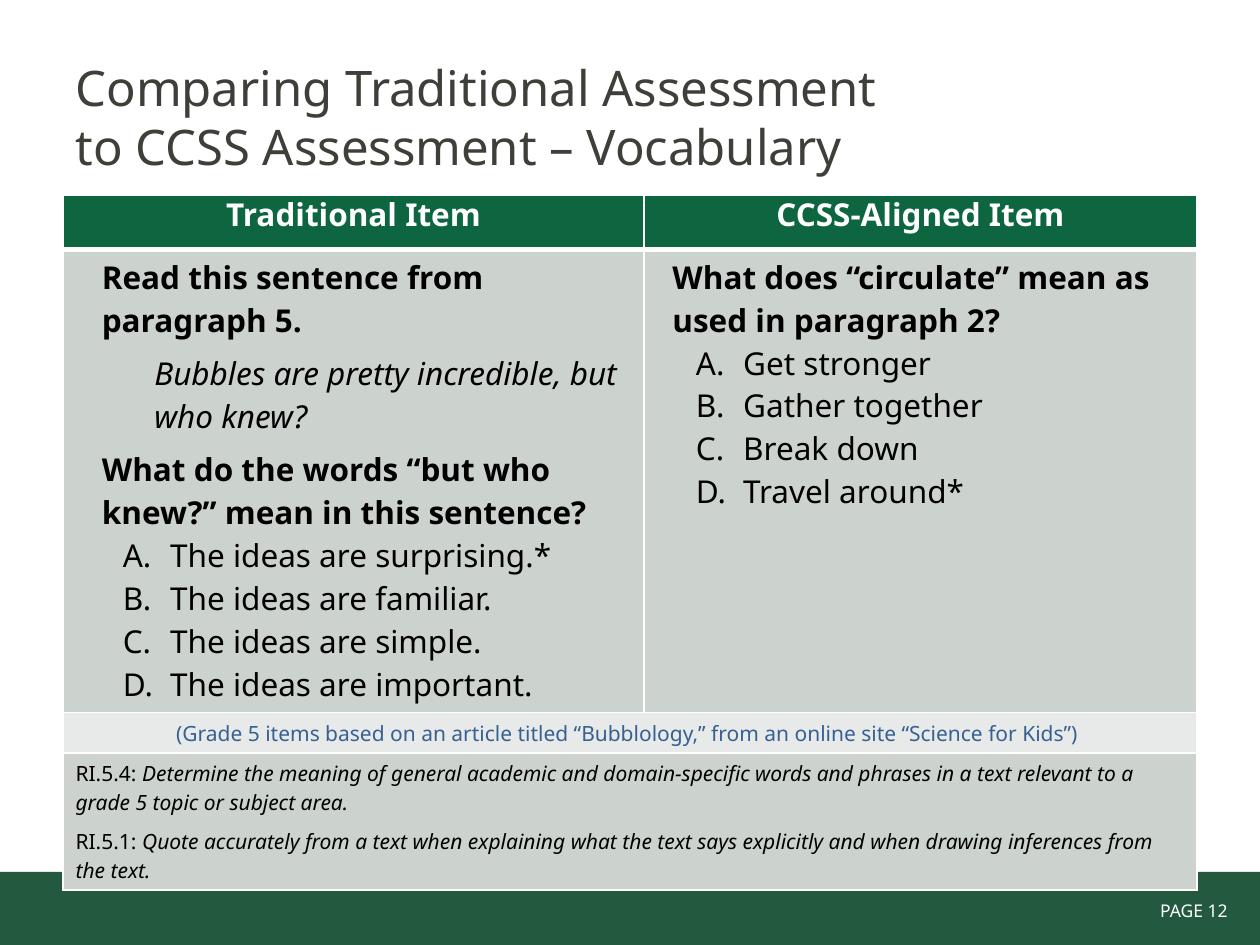
"""Build the slide comparing a traditional vocabulary item with a CCSS-aligned one."""
from dataclasses import dataclass

from lxml.etree import SubElement
from pptx import Presentation
from pptx.dml.color import RGBColor
from pptx.enum.shapes import MSO_SHAPE
from pptx.enum.text import MSO_ANCHOR, MSO_AUTO_SIZE, PP_ALIGN
from pptx.oxml.ns import qn
from pptx.slide import Slide
from pptx.table import Table, _Cell
from pptx.text.text import TextFrame, _Paragraph
from pptx.util import Pt


@dataclass(frozen=True)
class Theme:
    """Font, colours and type sizes of the slide."""
    font: str = "Noto Sans"
    white: str = "FFFFFF"
    ink: str = "000000"
    title: str = "3F3F39"
    band: str = "23593E"
    header: str = "0E6641"
    panel: str = "CCD3CF"
    pale: str = "E7EAE9"
    source: str = "376092"
    title_size: float = 28
    item_size: float = 18
    note_size: float = 12
    page_size: float = 10


THEME = Theme()


@dataclass(frozen=True)
class Span:
    """A stretch of text in one style."""
    text: str
    size: float
    color: str = THEME.ink
    bold: bool = False
    italic: bool = False


@dataclass(frozen=True)
class Line:
    """A paragraph with its spans and layout."""
    spans: tuple[Span, ...]
    align: PP_ALIGN = PP_ALIGN.LEFT
    indent: float = 0
    hanging: float = 0
    before: float = 0
    leading: float | None = None


@dataclass(frozen=True)
class Panel:
    """A table cell with its place, fill and lines."""
    row: int
    column: int
    lines: tuple[Line, ...]
    fill: str
    anchor: MSO_ANCHOR = MSO_ANCHOR.TOP
    merged: bool = False
    right_margin: float = 7.2


def heading(text: str) -> Line:
    """Describe a column heading."""
    span = Span(text, THEME.item_size, THEME.white, bold=True)
    return Line((span,), PP_ALIGN.CENTER, leading=14.8)


def question(text: str, indent: float, before: float = 0) -> Line:
    """Describe a bold question stem."""
    return Line((Span(text, THEME.item_size, bold=True),), indent=indent, before=before)


def choices(indent: float, *answers: str) -> tuple[Line, ...]:
    """Describe lettered answer choices."""
    return tuple(Line((Span(answer, THEME.item_size),), indent=indent, hanging=27)
                 for answer in answers)


def standard(code: str, wording: str, before: float = 0) -> Line:
    """Describe a standard with its code."""
    return Line((Span(f"{code}: ", THEME.note_size),
                 Span(wording, THEME.note_size, italic=True)), before=before)


TRADITIONAL = (
    question("Read this sentence from paragraph 5.", 15),
    Line((Span("Bubbles are pretty incredible, but who knew?", THEME.item_size, italic=True),),
         indent=45, before=6),
    question("What do the words “but who knew?” mean in this sentence?", 15, before=6),
    *choices(54, "The ideas are surprising.*", "The ideas are familiar.",
             "The ideas are simple.", "The ideas are important."),
)
ALIGNED = (
    question("What does “circulate” mean as used in paragraph 2?", 9),
    *choices(49.5, "Get stronger", "Gather together", "Break down", "Travel around*"),
)
SOURCE = Line((Span("(Grade 5 items based on an article titled “Bubblology,” from an online "
                    "site “Science for Kids”)", THEME.note_size, THEME.source),),
              PP_ALIGN.CENTER)
STANDARDS = (
    standard("RI.5.4", "Determine the meaning of general academic and domain-specific words "
             "and phrases in a text relevant to a grade 5 topic or subject area."),
    standard("RI.5.1", "Quote accurately from a text when explaining what the text says "
             "explicitly and when drawing inferences from the text.", before=6),
)
PANELS = (
    Panel(0, 0, (heading("Traditional Item"),), THEME.header, MSO_ANCHOR.MIDDLE),
    Panel(0, 1, (heading("CCSS-Aligned Item"),), THEME.header, MSO_ANCHOR.MIDDLE),
    Panel(1, 0, TRADITIONAL, THEME.panel),
    Panel(1, 1, ALIGNED, THEME.panel),
    Panel(2, 0, (SOURCE,), THEME.pale, merged=True, right_margin=10.2),
    Panel(3, 0, STANDARDS, THEME.panel, merged=True),
)
COLUMN_WIDTHS = (332, 316)
ROW_HEIGHTS = (31, 264.5, 23.3, 78.2)


def add_span(paragraph: _Paragraph, span: Span) -> None:
    """Add one styled run."""
    run = paragraph.add_run()
    run.text = span.text
    run.font.name = THEME.font
    run.font.size = Pt(span.size)
    run.font.bold = span.bold
    run.font.italic = span.italic
    run.font.color.rgb = RGBColor.from_string(span.color)


def write_lines(frame: TextFrame, lines: tuple[Line, ...]) -> None:
    """Fill a text frame with paragraphs."""
    for index, line in enumerate(lines):
        paragraph = frame.add_paragraph() if index else frame.paragraphs[0]
        paragraph.alignment = line.align
        paragraph.space_before = Pt(line.before)
        if line.leading:
            paragraph.line_spacing = Pt(line.leading)
        properties = paragraph._p.get_or_add_pPr()
        properties.set("marL", str(Pt(line.indent)))
        properties.set("indent", str(-Pt(line.hanging)))
        if line.hanging:
            SubElement(properties, qn("a:buAutoNum"), type="alphaUcPeriod")
        for span in line.spans:
            add_span(paragraph, span)


def add_borders(cell: _Cell, row: int) -> None:
    """Draw white cell edges, heavier under the header."""
    properties = cell._tc.get_or_add_tcPr()
    widths = {"L": 1, "R": 1, "T": 3 if row == 1 else 1, "B": 3 if row == 0 else 1}
    for side, width in widths.items():
        edge = SubElement(properties, qn(f"a:ln{side}"), w=str(Pt(width)))
        SubElement(SubElement(edge, qn("a:solidFill")), qn("a:srgbClr"), val=THEME.white)


def fill_panel(table: Table, panel: Panel) -> None:
    """Write one panel into the table."""
    cell = table.cell(panel.row, panel.column)
    if panel.merged:
        cell.merge(table.cell(panel.row, len(COLUMN_WIDTHS) - 1))
    cell.vertical_anchor = panel.anchor
    cell.margin_right = Pt(panel.right_margin)
    write_lines(cell.text_frame, panel.lines)


def add_comparison(slide: Slide) -> None:
    """Add the comparison table."""
    table = slide.shapes.add_table(len(ROW_HEIGHTS), len(COLUMN_WIDTHS), Pt(36), Pt(111.6),
                                   Pt(sum(COLUMN_WIDTHS)), Pt(sum(ROW_HEIGHTS))).table
    table.first_row = table.horz_banding = False
    for column, width in zip(table.columns, COLUMN_WIDTHS):
        column.width = Pt(width)
    for row, height in zip(table.rows, ROW_HEIGHTS):
        row.height = Pt(height)
    for panel in PANELS:
        fill_panel(table, panel)
    fills = {panel.row: panel.fill for panel in PANELS}
    for index, row in enumerate(table.rows):
        for cell in row.cells:
            add_borders(cell, index)
            cell.fill.solid()
            cell.fill.fore_color.rgb = RGBColor.from_string(fills[index])


def add_title(slide: Slide) -> None:
    """Write the two-line title in its placeholder."""
    title = slide.shapes.title
    title.left, title.top, title.width, title.height = Pt(36), Pt(21.6), Pt(648), Pt(90)
    frame = title.text_frame
    frame.auto_size = MSO_AUTO_SIZE.NONE
    frame.vertical_anchor = MSO_ANCHOR.MIDDLE
    paragraph = frame.paragraphs[0]
    paragraph.alignment = PP_ALIGN.LEFT
    add_span(paragraph, Span("Comparing Traditional Assessment", THEME.title_size, THEME.title))
    paragraph.add_line_break()
    add_span(paragraph, Span("to CCSS Assessment – Vocabulary", THEME.title_size, THEME.title))


def add_footer(slide: Slide) -> None:
    """Add the footer band and page number."""
    band = slide.shapes.add_shape(MSO_SHAPE.RECTANGLE, Pt(0), Pt(498.2), Pt(720), Pt(41.8))
    band.shadow.inherit = False
    band.fill.solid()
    band.fill.fore_color.rgb = RGBColor.from_string(THEME.band)
    band.line.fill.background()
    page = slide.shapes.add_textbox(Pt(596), Pt(510.5), Pt(112.5), Pt(19.4)).text_frame
    page.word_wrap = True
    write_lines(page, (Line((Span("PAGE 12", THEME.page_size, THEME.white),), PP_ALIGN.RIGHT),))


def main() -> None:
    """Build and save the slide."""
    deck = Presentation()
    deck.slide_width, deck.slide_height = Pt(720), Pt(540)
    slide = deck.slides.add_slide(deck.slide_layouts[5])
    add_footer(slide)
    add_title(slide)
    add_comparison(slide)
    deck.save("out.pptx")


if __name__ == "__main__":
    main()
